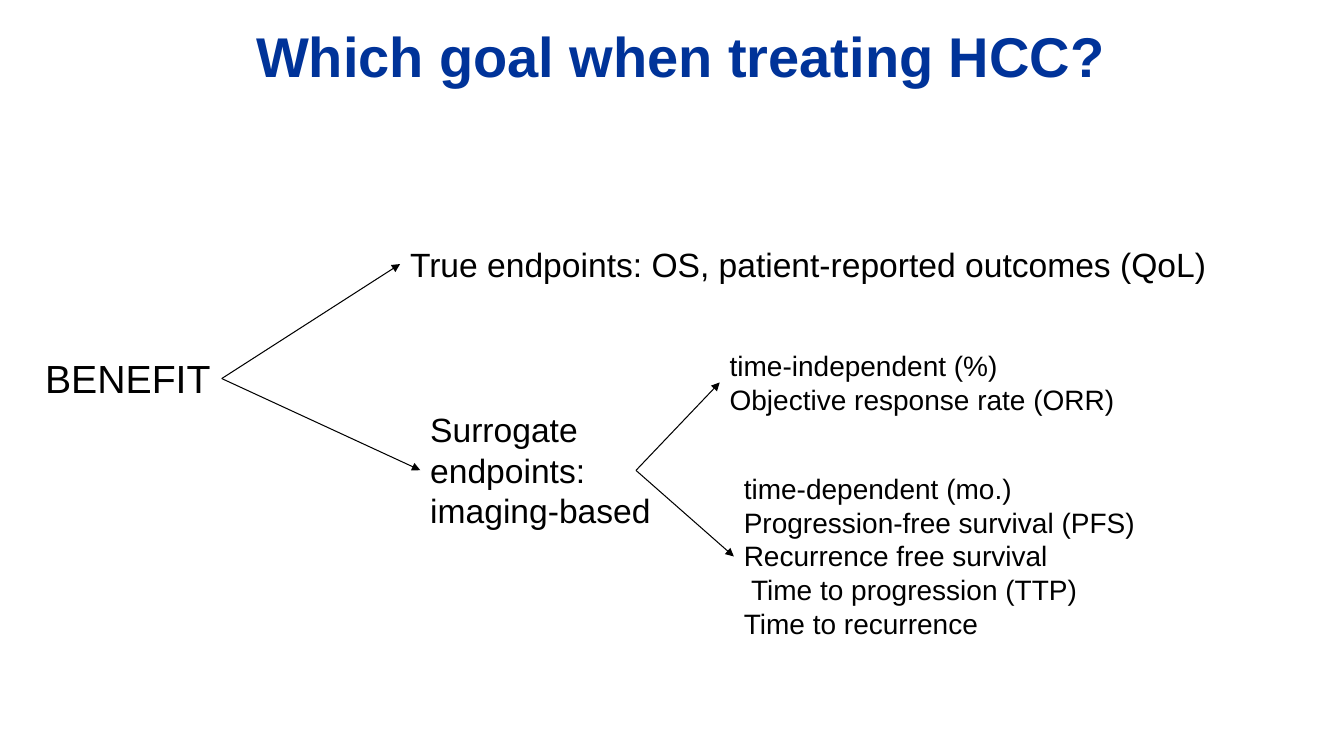
"""Build the slide on treatment goals in HCC as a branching tree of endpoints."""
from lxml.etree import SubElement
from pptx import Presentation
from pptx.dml.color import RGBColor
from pptx.enum.shapes import MSO_CONNECTOR
from pptx.enum.text import MSO_ANCHOR, MSO_AUTO_SIZE, PP_ALIGN
from pptx.oxml.ns import qn
from pptx.util import Pt

TITLE = "Which goal when treating HCC?"
TITLE_AREA = (175.7, 11.5, 627, 55.4)
BLUE, BLACK = "003399", "000000"
LEFT_SIDE = 1

NODES = {
    "benefit": (["BENEFIT"], (25.2, 249.8, 544.3, 41), 28),
    "true": (["True endpoints: OS, patient-reported outcomes (QoL)"],
             (285.8, 170.6, 586, 36), 24),
    "surrogate": (["Surrogate endpoints: imaging-based"],
                  (300.2, 288.7, 200.2, 94.3), 24),
    "independent": (["time-independent (%)", "Objective response rate (ORR)"],
                    (514.1, 245.5, 357.8, 55.4), 20),
    "dependent": (["time-dependent (mo.)", "Progression-free survival (PFS)",
                   "Recurrence free survival", " Time to progression (TTP)",
                   "Time to recurrence"],
                  (524.2, 333.4, 405.4, 128.2), 20),
}

FORKS = [
    ((158.4, 270.4), ["true", "surrogate"]),
    ((454.3, 336), ["independent", "dependent"]),
]


def color(value):
    return RGBColor.from_string(value)


def write(box, lines, size, ink=BLACK, bold=False, wrap=True):
    frame = box.text_frame
    frame.word_wrap = wrap
    frame.auto_size = MSO_AUTO_SIZE.SHAPE_TO_FIT_TEXT
    frame.vertical_anchor = MSO_ANCHOR.TOP
    for index, line in enumerate(lines):
        para = frame.paragraphs[0] if index == 0 else frame.add_paragraph()
        para.alignment = PP_ALIGN.LEFT
        span = para.add_run()
        span.text = line
        span.font.name = "Arial"
        span.font.size = Pt(size)
        span.font.bold = bold
        span.font.color.rgb = color(ink)


def add_arrow(page, start, target):
    x, y = start
    middle = target.top + target.height // 2
    arrow = page.shapes.add_connector(
        MSO_CONNECTOR.STRAIGHT, Pt(x), Pt(y), target.left, middle)
    arrow.end_connect(target, LEFT_SIDE)
    arrow.line.color.rgb = color(BLACK)
    arrow.line.width = Pt(0.75)
    SubElement(arrow.line._get_or_add_ln(), qn("a:tailEnd"), type="triangle")
    SubElement(arrow._element.spPr, qn("a:effectLst"))


def main():
    deck = Presentation()
    deck.slide_width, deck.slide_height = Pt(960), Pt(540)
    page = deck.slides.add_slide(deck.slide_layouts[5])

    title = page.shapes.title
    title.left, title.top, title.width, title.height = map(Pt, TITLE_AREA)
    write(title, [TITLE], size=40, ink=BLUE, bold=True, wrap=False)

    boxes = {}
    for name, (lines, area, size) in NODES.items():
        boxes[name] = page.shapes.add_textbox(*map(Pt, area))
        write(boxes[name], lines, size=size)

    for start, targets in FORKS:
        for target in targets:
            add_arrow(page, start, boxes[target])

    deck.save("out.pptx")


if __name__ == "__main__":
    main()
